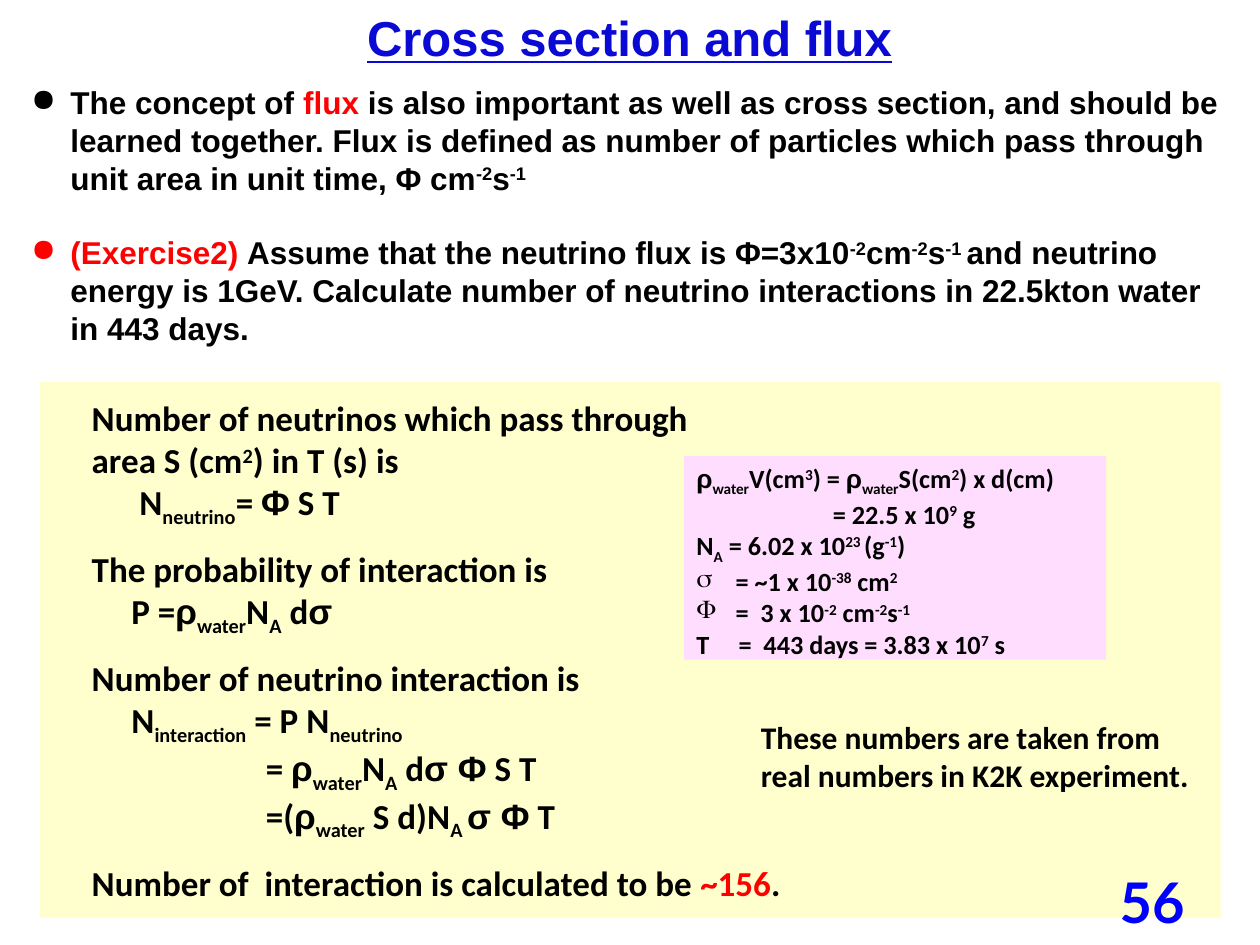
from dataclasses import dataclass

from lxml import etree
from pptx import Presentation
from pptx import util as u
from pptx.dml import color
from pptx.enum import shapes, text
from pptx.oxml import ns

BLACK, RED, BLUE, TITLE_BLUE = "000000", "FF0000", "0000FF", "0A0AD4"
CREAM, PINK = "FFFFCD", "FFDDFE"
HANG = 0.79


@dataclass
class Run:
    text: str
    colour: str = BLACK
    font: str = ""
    baseline: int = 0


@dataclass
class Line:
    runs: list
    left: float = 0
    hang: float = 0
    bullet: str = ""
    before: float = 0


def sup(words):
    return Run(words, baseline=30000)


def sub(words):
    return Run(words, baseline=-25000)


def greek(words):
    return Run(words, font="Arial")


def red(words):
    return Run(words, RED)


def rgb(hex_string):
    return color.RGBColor.from_string(hex_string)


class SlideBuilder:
    def __init__(self, slide):
        self.slide = slide

    def panel(self, box, fill):
        panel = self.slide.shapes.add_shape(
            shapes.MSO_SHAPE.RECTANGLE, *map(u.Cm, box))
        panel.shadow.inherit = False
        panel.fill.solid()
        panel.fill.fore_color.rgb = rgb(fill)
        panel.line.fill.background()
        return panel

    def textbox(self, box, lines, **style):
        holder = self.slide.shapes.add_textbox(*map(u.Cm, box))
        self.add_lines(holder, lines, **style)

    def add_lines(self, holder, lines, size, font="Calibri", colour=None,
                  align=text.PP_ALIGN.LEFT, anchor=text.MSO_ANCHOR.TOP,
                  underline=None):
        frame = holder.text_frame
        frame.word_wrap = True
        frame.vertical_anchor = anchor
        for index, line in enumerate(lines):
            paragraph = frame.paragraphs[0] if index == 0 else frame.add_paragraph()
            paragraph.alignment = align
            paragraph.space_before = u.Pt(line.before)
            self.indent(paragraph, line)
            for item in line.runs:
                part = item if isinstance(item, Run) else Run(item)
                for row, words in enumerate(part.text.split("\n")):
                    if row:
                        paragraph.add_line_break()
                    run = paragraph.add_run()
                    run.text = words
                    run.font.size = u.Pt(size)
                    run.font.bold = True
                    run.font.underline = underline
                    run.font.name = part.font or font
                    run.font.color.rgb = rgb(colour or part.colour)
                    if part.baseline:
                        run._r.get_or_add_rPr().set("baseline", str(part.baseline))

    def indent(self, paragraph, line):
        properties = paragraph._p.get_or_add_pPr()
        properties.set("marL", str(int(u.Cm(line.left + line.hang))))
        properties.set("indent", str(-int(u.Cm(line.hang))))
        if line.bullet:
            mark = etree.SubElement(properties, ns.qn("a:buChar"))
            mark.set("char", line.bullet)


def main():
    deck = Presentation()
    deck.slide_width, deck.slide_height = u.Cm(25.4), u.Cm(19.05)
    builder = SlideBuilder(deck.slides.add_slide(deck.slide_layouts[6]))

    builder.panel((0.81, 7.7, 23.8, 10.8), CREAM)

    builder.textbox((0.38, 1.55, 25.02, 5.64), [
        Line(["The concept of ", red("flux"),
              " is also important as well as cross section, and should be "
              "learned together. Flux is defined as number of particles which "
              "pass through unit area in unit time, Φ cm",
              sup("-2"), "s", sup("-1")], hang=HANG, bullet="●"),
        Line([red("(Exercise2) "), "Assume that the neutrino flux is Φ=3x10",
              sup("-2"), "cm", sup("-2"), "s", sup("-1 "),
              "and neutrino energy is 1GeV. Calculate number of neutrino "
              "interactions in 22.5kton water\nin 443 days."],
             hang=HANG, bullet="●", before=21),
    ], size=18, font="Arial")

    builder.textbox((0.69, 0.03, 24, 1.45), [Line(["Cross section and flux"])],
                    size=28, font="Arial", colour=TITLE_BLUE,
                    align=text.PP_ALIGN.CENTER, underline=True)

    density = [greek("ρ"), sub("water")]
    values = builder.panel((13.79, 9.19, 8.51, 4.11), PINK)
    builder.add_lines(values, [
        Line([*density, "V(cm", sup("3"), ") = ", *density, "S(cm", sup("2"),
              ") x d(cm)"]),
        Line(["= 22.5 x 10", sup("9"), " g"], left=2.75),
        Line(["N", sub("A"), " = 6.02 x 10", sup("23 "), "(g", sup("-1"), ")"]),
        Line(["= ~1 x 10", sup("-38"), " cm", sup("2")], hang=HANG, bullet="σ"),
        Line(["=  3 x 10", sup("-2"), " cm", sup("-2"), "s", sup("-1")],
             hang=HANG, bullet="Φ"),
        Line(["T\t=  443 days = 3.83 x 10", sup("7"), " s"], hang=0.85),
    ], size=15)

    formula, continuation, gap = 0.8, 3.51, 11
    builder.textbox((1.6, 7.87, 15.9, 9.96), [
        Line(["Number of neutrinos which pass through\narea S (cm", sup("2"),
              ") in T (s) is"]),
        Line(["N", sub("neutrino"), "= ", greek("Φ"), " S T"], left=0.96),
        Line(["The probability of interaction is"], before=gap),
        Line(["P =", *density, "N", sub("A"), " d", greek("σ")], left=formula),
        Line(["Number of neutrino interaction is"], before=gap),
        Line(["N", sub("interaction"), " = P N", sub("neutrino")], left=formula),
        Line(["= ", *density, "N", sub("A"), " d", greek("σ Φ"), " S T"],
             left=continuation),
        Line(["=(", *density, " S d)N", sub("A "), greek("σ Φ"), " T"],
             left=continuation),
        Line(["Number of  interaction is calculated to be ", red("~156"), "."],
             before=gap),
    ], size=20)

    builder.textbox((15.09, 14.35, 9.55, 1.8), [
        Line(["These numbers are taken from real numbers in K2K experiment."]),
    ], size=18)

    builder.textbox((18.21, 17.65, 5.92, 1.02), [Line(["56"])], size=32,
                    font="Lato", colour=BLUE, align=text.PP_ALIGN.RIGHT,
                    anchor=text.MSO_ANCHOR.MIDDLE)

    deck.save("out.pptx")


if __name__ == "__main__":
    main()
